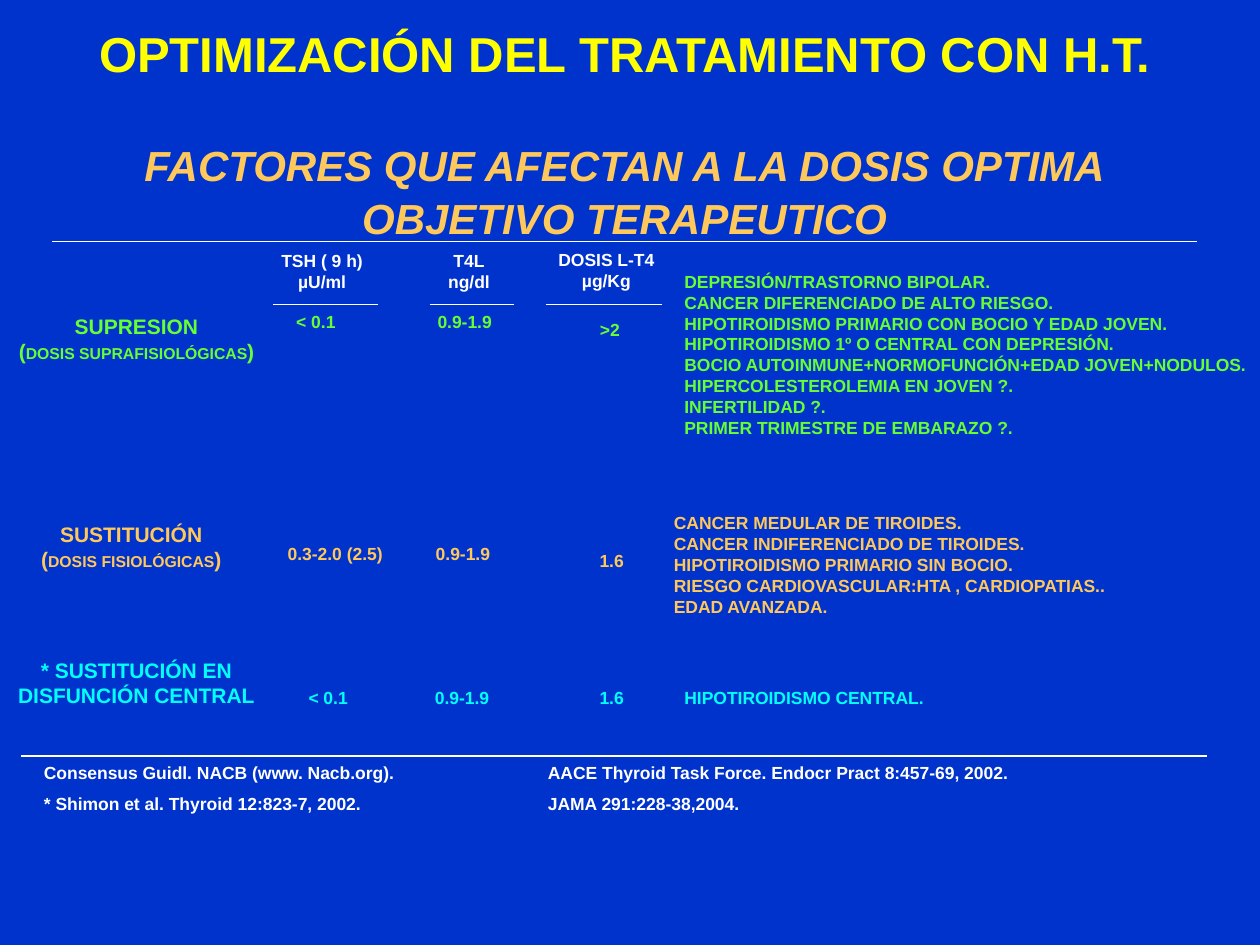
"""Build the slide on optimising thyroid hormone treatment."""
from dataclasses import dataclass

from lxml import etree
from pptx import Presentation
from pptx import util as u
from pptx.dml.color import RGBColor
from pptx.enum import shapes, text
from pptx.oxml import ns


@dataclass(frozen=True)
class Theme:
    font: str = "Arial"
    back: str = "0033CC"
    title: str = "FFFF00"
    white: str = "FFFFFF"
    green: str = "66FF33"
    orange: str = "FFC85B"
    cyan: str = "00FFFF"
    title_size: int = 28
    subtitle_size: int = 24
    label_size: int = 12
    body_size: int = 10
    small_size: int = 9


theme = Theme()
left, center = text.PP_ALIGN.LEFT, text.PP_ALIGN.CENTER


def add_text(place, lines, color, size=theme.body_size, align=left, spacing=0.55):
    """Add a text box; a line is a string or a list of (text, size) spans."""
    box = page.shapes.add_textbox(*(u.Pt(value) for value in place))
    frame = box.text_frame
    frame.word_wrap = True
    for index, line in enumerate(lines):
        para = frame.paragraphs[0] if index == 0 else frame.add_paragraph()
        layout = {"alignment": align, "line_spacing": spacing,
                  "space_before": u.Pt(0.53 * size if index else 0)}
        for name, value in layout.items():
            setattr(para, name, value)
        for words, span_size in [(line, size)] if isinstance(line, str) else line:
            span = para.add_run()
            span.text = words
            span.font.color.rgb = RGBColor.from_string(color)
            style = {"name": theme.font, "size": u.Pt(span_size), "bold": True}
            for name, value in style.items():
                setattr(span.font, name, value)
    return box


deck = Presentation()
deck.slide_width, deck.slide_height = u.Pt(720), u.Pt(540)
page = deck.slides.add_slide(deck.slide_layouts[6])
page.background.fill.solid()
page.background.fill.fore_color.rgb = RGBColor.from_string(theme.back)

heading = add_text(
    (18, 31, 678, 90),
    ["OPTIMIZACIÓN DEL TRATAMIENTO CON H.T.",
     [("FACTORES QUE AFECTAN A LA DOSIS OPTIMA", theme.subtitle_size)],
     [("OBJETIVO TERAPEUTICO", theme.subtitle_size)]],
    theme.title, theme.title_size, center, 1.0)
heading.text_frame.vertical_anchor = text.MSO_ANCHOR.MIDDLE
for para, gap in zip(heading.text_frame.paragraphs[1:], (33, 1.5)):
    para.space_before = u.Pt(gap)
    para.runs[0].font.italic = True
    para.runs[0].font.color.rgb = RGBColor.from_string(theme.orange)

for place, lines in [
    ((146, 144, 76, 36), ["TSH ( 9 h)", "µU/ml"]),
    ((232, 144, 72, 36), ["T4L", "ng/dl"]),
    ((304.5, 143.5, 84, 25), ["DOSIS L-T4", "µg/Kg"]),
]:
    add_text(place, lines, theme.white, align=center)

for start, end, height in [(30, 684, 138), (12, 690, 432), (312, 378, 174),
                           (156, 216, 174), (246, 294, 174)]:
    rule = page.shapes.add_connector(
        shapes.MSO_CONNECTOR.STRAIGHT,
        u.Pt(start), u.Pt(height), u.Pt(end), u.Pt(height))
    rule.line.color.rgb = RGBColor.from_string(theme.white)
    rule.line.width = u.Pt(0.75)
    etree.SubElement(rule._element.spPr, ns.qn("a:effectLst"))


def dose_note(words):
    """Return the spans of a small note between larger brackets."""
    return [("(", theme.label_size), (words, theme.small_size), (")", theme.label_size)]


goals = [
    (theme.green, (-18, 181.5, 192, 52),
     ["SUPRESION", dose_note("DOSIS SUPRAFISIOLÓGICAS")],
     [("< 0.1", 180.5, 174), ("0.9-1.9", 265.5, 174), (">2", 348.5, 178.5)],
     (384, 156, 354, 102),
     ["DEPRESIÓN/TRASTORNO BIPOLAR.",
      "CANCER DIFERENCIADO DE ALTO RIESGO.",
      "HIPOTIROIDISMO PRIMARIO CON BOCIO Y EDAD JOVEN.",
      "HIPOTIROIDISMO 1º O CENTRAL CON DEPRESIÓN.",
      "BOCIO AUTOINMUNE+NORMOFUNCIÓN+EDAD JOVEN+NODULOS.",
      "HIPERCOLESTEROLEMIA EN JOVEN ?.",
      "INFERTILIDAD ?.",
      "PRIMER TRIMESTRE DE EMBARAZO ?."]),
    (theme.orange, (-6, 300, 162, 30),
     ["SUSTITUCIÓN", dose_note("DOSIS FISIOLÓGICAS")],
     [("0.3-2.0 (2.5)", 191.5, 306.5), ("0.9-1.9", 264.5, 306.5), ("1.6", 349.5, 311)],
     (378, 294, 324, 66),
     ["CANCER MEDULAR DE TIROIDES.",
      "CANCER INDIFERENCIADO DE TIROIDES.",
      "HIPOTIROIDISMO PRIMARIO SIN BOCIO.",
      "RIESGO CARDIOVASCULAR:HTA , CARDIOPATIAS..",
      "EDAD AVANZADA."]),
    (theme.cyan, (-24, 378, 204, 30),
     ["* SUSTITUCIÓN EN", "DISFUNCIÓN CENTRAL"],
     [("< 0.1", 187.5, 389), ("0.9-1.9", 264, 389), ("1.6", 349.5, 389)],
     (384, 394, 198, 19),
     ["HIPOTIROIDISMO CENTRAL."]),
]
for color, label_place, label, values, cases_place, cases in goals:
    add_text(label_place, label, color, theme.label_size, center)
    for value, middle, top in values:
        add_text((middle - 38, top, 76, 19), [value], color, align=center, spacing=1.0)
    add_text(cases_place, cases, color)

for start, width, sources in [
    (18, 276, ["Consensus Guidl. NACB (www. Nacb.org).",
               "* Shimon et al. Thyroid 12:823-7, 2002."]),
    (306, 300, ["AACE Thyroid Task Force. Endocr Pract 8:457-69, 2002.",
                "JAMA 291:228-38,2004."]),
]:
    add_text((start, 432, width, 37), sources, theme.white, spacing=1.0)

deck.save("out.pptx")
